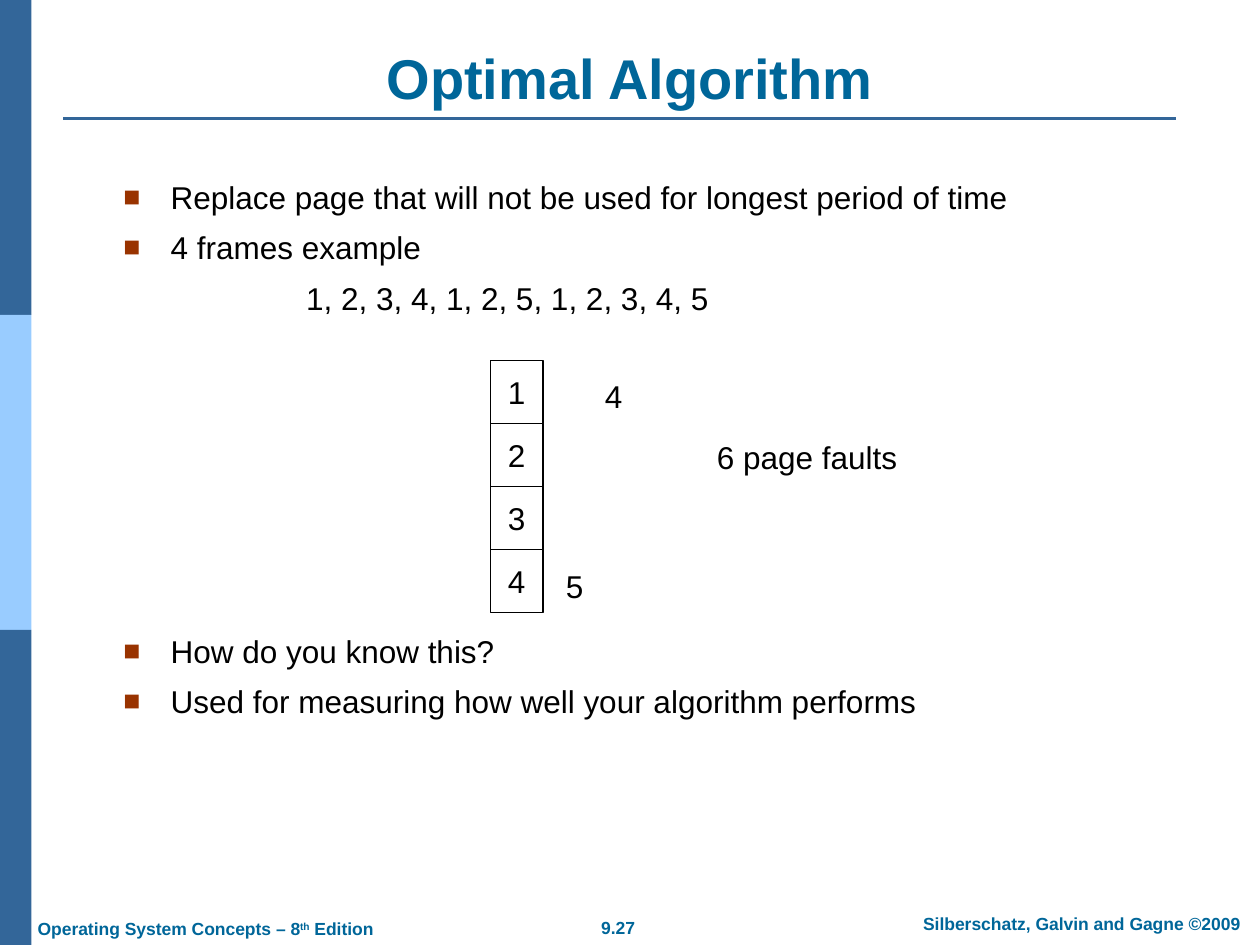
import pptx
import pptx.dml.color
import pptx.enum.shapes
import pptx.enum.text
import pptx.oxml
import pptx.oxml.ns
import pptx.util

Pt = pptx.util.Pt
ALIGN = pptx.enum.text.PP_ALIGN
ANCHOR = pptx.enum.text.MSO_ANCHOR
FONT = "Arial"
COLORS = {"heading": "006699", "stripe": "336699", "light": "99CCFF",
          "bullet": "993300", "text": "000000", "cell": "FFFFFF"}


def rgb(name):
    return pptx.dml.color.RGBColor.from_string(COLORS[name])


def add_run(paragraph, text, size, color, bold=False):
    run = paragraph.add_run()
    run.text = text
    run.font.name = FONT
    run.font.size = Pt(size)
    run.font.bold = bold
    run.font.color.rgb = rgb(color)
    return run


def add_text(slide, box, runs, size=18, color="text", bold=False,
             align=ALIGN.CENTER, anchor=ANCHOR.TOP):
    shape = slide.shapes.add_textbox(*map(Pt, box))
    frame = shape.text_frame
    frame.word_wrap = False
    frame.vertical_anchor = anchor
    paragraph = frame.paragraphs[0]
    paragraph.alignment = align
    return [add_run(paragraph, text, size, color, bold) for text in runs]


def add_rectangle(slide, box, fill, line=None):
    shape = slide.shapes.add_shape(
        pptx.enum.shapes.MSO_SHAPE.RECTANGLE, *map(Pt, box))
    shape.shadow.inherit = False
    shape.fill.solid()
    shape.fill.fore_color.rgb = rgb(fill)
    if line:
        shape.line.color.rgb = rgb(line)
        shape.line.width = Pt(0.75)
    else:
        shape.line.fill.background()
    return shape


def add_frame_cell(slide, box, label):
    shape = add_rectangle(slide, box, "cell", "text")
    frame = shape.text_frame
    frame.word_wrap = False
    frame.vertical_anchor = ANCHOR.MIDDLE
    paragraph = frame.paragraphs[0]
    paragraph.alignment = ALIGN.CENTER
    add_run(paragraph, label, 18, "text")


def add_rule(slide, left, right, top):
    line = slide.shapes.add_connector(
        pptx.enum.shapes.MSO_CONNECTOR.STRAIGHT,
        Pt(left), Pt(top), Pt(right), Pt(top))
    line.line.color.rgb = rgb("stripe")
    line.line.width = Pt(1.5)
    line._element.spPr.append(pptx.oxml.parse_xml(
        f'<a:effectLst {pptx.oxml.ns.nsdecls("a")}/>'))


def set_title(slide, text):
    title = slide.shapes.title
    title.left, title.top, title.width, title.height = map(Pt, (36, 21.6, 648, 45.4))
    frame = title.text_frame
    frame.auto_size = pptx.enum.text.MSO_AUTO_SIZE.NONE
    frame.vertical_anchor = ANCHOR.BOTTOM
    paragraph = frame.paragraphs[0]
    paragraph.alignment = ALIGN.CENTER
    add_run(paragraph, text, 32, "heading", True)


def add_bullet(properties):
    namespace = pptx.oxml.ns.nsdecls("a")
    for xml in (f'<a:buClr {namespace}><a:srgbClr val="{COLORS["bullet"]}"/></a:buClr>',
                f'<a:buSzPct {namespace} val="90000"/>',
                f'<a:buFont {namespace} typeface="{FONT}"/>',
                f'<a:buChar {namespace} char="■"/>'):
        properties.append(pptx.oxml.parse_xml(xml))


def add_body(slide, box, items):
    frame = slide.shapes.add_textbox(*map(Pt, box)).text_frame
    frame.word_wrap = True
    for index, (text, bulleted, space_before) in enumerate(items):
        paragraph = frame.add_paragraph() if index else frame.paragraphs[0]
        paragraph.space_before = Pt(space_before)
        properties = paragraph._p.get_or_add_pPr()
        properties.set("marL", str(Pt(27 if bulleted else 104.4)))
        properties.set("indent", str(Pt(-27 if bulleted else 0)))
        if bulleted:
            add_bullet(properties)
        add_run(paragraph, text, 18, "text")


def main():
    presentation = pptx.Presentation()
    presentation.slide_width, presentation.slide_height = Pt(720), Pt(540)
    slide = presentation.slides.add_slide(presentation.slide_layouts[5])

    for index, color in enumerate(("stripe", "light", "stripe")):
        add_rectangle(slide, (0, 180 * index, 18, 180), color)
    add_rule(slide, 36, 672, 67.7)

    footer = {"size": 10, "color": "heading", "bold": True}
    add_text(slide, (335.5, 520.6, 35.3, 19.4), ["9.27"], **footer)
    add_text(slide, (511.2, 518.4, 213.8, 19.4),
             ["Silberschatz, Galvin and Gagne ©2009"], **footer)
    book = add_text(slide, (14.4, 521.3, 207.4, 19.4),
                    ["Operating System Concepts – 8", "th", " Edition"],
                    align=ALIGN.LEFT, **footer)
    book[1].font._element.set("baseline", "30000")

    set_title(slide, "Optimal Algorithm")
    add_body(slide, (63.4, 97.9, 648, 356.4), [
        ("Replace page that will not be used for longest period of time", True, 0),
        ("4 frames example", True, 7.3),
        ("1, 2, 3, 4, 1, 2, 5, 1, 2, 3, 4, 5", False, 7.3),
        ("How do you know this?", True, 180),
        ("Used for measuring how well your algorithm performs", True, 7.3),
    ])

    for index in range(4):
        add_frame_cell(slide, (280.1, 205.9 + 36 * index, 30.2, 36), str(index + 1))
    for text, left, top, width in (("4", 338.4, 211.7, 24.5),
                                   ("6 page faults", 402.5, 246.5, 117.4),
                                   ("5", 316.1, 320.2, 24.5)):
        add_text(slide, (left, top, width, 28.8), [text], anchor=ANCHOR.MIDDLE)

    presentation.save("out.pptx")


if __name__ == "__main__":
    main()
